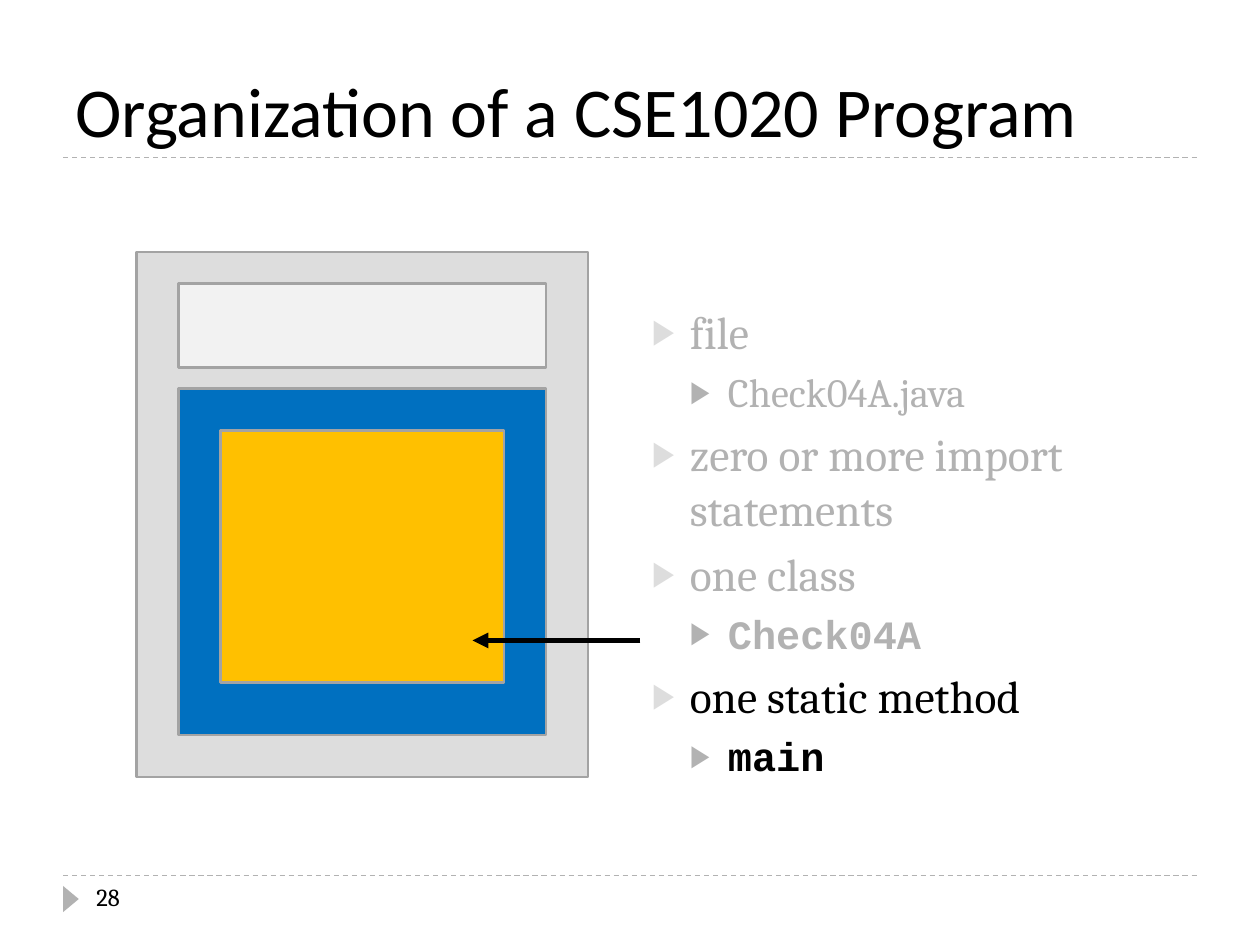
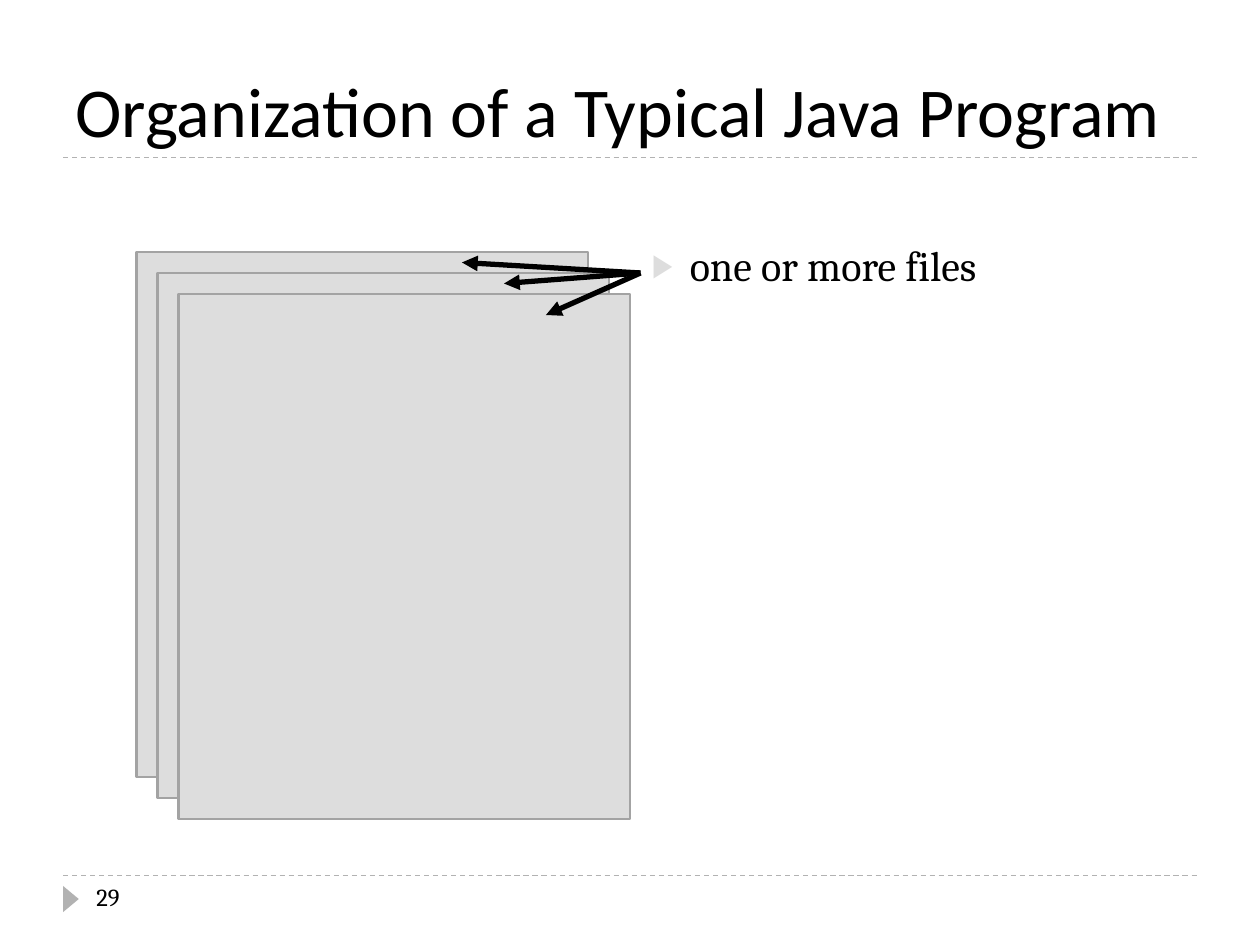
from dataclasses import dataclass
from typing import Any

from lxml.etree import SubElement
from pptx import Presentation
from pptx.dml.color import RGBColor
from pptx.enum.dml import MSO_LINE_DASH_STYLE as Dash
from pptx.enum.shapes import MSO_CONNECTOR_TYPE as ConnectorType
from pptx.enum.shapes import MSO_SHAPE as ShapeType
from pptx.enum.text import MSO_ANCHOR as Anchor
from pptx.enum.text import MSO_AUTO_SIZE as AutoSize
from pptx.enum.text import PP_ALIGN as Align
from pptx.oxml.ns import qn
from pptx.util import Emu, Pt

EMU_PER_PX = 9525
BLACK, WHITE = "000000", "FFFFFF"
MUTED, PALE = "B2B2B2", "DDDDDD"
OUTLINE, IMPORTS, CLASS, METHOD = "A3A3A3", "F2F2F2", "0070C0", "FFC000"
TITLE_FONT, TEXT_FONT, CODE_FONT = "Calibri", "Cambria", "Courier New"
INDENT = 29
BODY_LEFT, BODY_WIDTH, BODY_BOTTOM = 487, 424, 646
RULE_LEFT, RULE_RIGHT = 48, 912
TITLE_RULE, FOOTER_RULE = 120, 667
ARROW_X = 488
FILE_STEP = 16


@dataclass(frozen=True)
class Block:
    left: int
    top: int
    width: int
    height: int
    fill: str


@dataclass(frozen=True)
class Line:
    x1: int
    y1: int
    x2: int
    y2: int


@dataclass(frozen=True)
class Item:
    text: str
    color: str = MUTED
    level: int = 0
    size: int = 26
    font: str = TEXT_FONT
    bold: bool = False


@dataclass(frozen=True)
class Page:
    number: int
    title: str
    body_top: int
    items: list[Item]
    blocks: list[Block]
    arrows: list[Line]


FILE = Block(104, 192, 344, 400, PALE)

PAGES = [
    Page(
        28,
        "Organization of a CSE1020 Program",
        227,
        [
            Item("file"),
            Item("Check04A.java", level=1, size=23),
            Item("zero or more import statements"),
            Item("one class"),
            Item("Check04A", level=1, size=23, font=CODE_FONT, bold=True),
            Item("one static method", BLACK),
            Item("main", BLACK, 1, 23, CODE_FONT, True),
        ],
        [
            FILE,
            Block(136, 216, 280, 64, IMPORTS),
            Block(136, 296, 280, 264, CLASS),
            Block(168, 328, 216, 192, METHOD),
        ],
        [Line(ARROW_X, 488, 360, 488)],
    ),
    Page(
        29,
        "Organization of a Typical Java Program",
        178,
        [Item("one or more files", BLACK, size=24)],
        [
            Block(FILE.left + shift, FILE.top + shift, FILE.width, FILE.height, PALE)
            for shift in range(0, 3 * FILE_STEP, FILE_STEP)
        ],
        [Line(ARROW_X, 208, x, y) for x, y in ((352, 200), (384, 216), (416, 240))],
    ),
]


def px(length: int) -> Emu:
    return Emu(length * EMU_PER_PX)


def rgb(value: str) -> RGBColor:
    return RGBColor.from_string(value)


def apply(target: Any, formats: dict[str, Any]) -> None:
    for name, value in formats.items():
        setattr(target, name, value)


def place(shape: Any, left: int, top: int, width: int, height: int) -> None:
    apply(shape, {"left": px(left), "top": px(top), "width": px(width), "height": px(height)})


def write(para: Any, text: str, font: str, size: int, color: str, bold: bool = False) -> None:
    span = para.add_run()
    span.text = text
    apply(span.font, {"name": font, "size": Pt(size), "bold": bold})
    span.font.color.rgb = rgb(color)


def add_line(slide: Any, line: Line, color: str, width: float) -> Any:
    connector = slide.shapes.add_connector(
        ConnectorType.STRAIGHT, px(line.x1), px(line.y1), px(line.x2), px(line.y2)
    )
    connector.line.color.rgb = rgb(color)
    connector.line.width = Pt(width)
    SubElement(connector._element.spPr, qn("a:effectLst"))
    return connector


def add_rule(slide: Any, y: int) -> None:
    rule = add_line(slide, Line(RULE_LEFT, y, RULE_RIGHT, y), MUTED, 0.75)
    rule.line.dash_style = Dash.DASH


def add_arrow(slide: Any, line: Line) -> None:
    arrow = add_line(slide, line, BLACK, 3)
    SubElement(arrow.line._get_or_add_ln(), qn("a:tailEnd"), type="triangle")


def add_block(slide: Any, block: Block, kind: ShapeType = ShapeType.RECTANGLE) -> Any:
    shape = slide.shapes.add_shape(
        kind, px(block.left), px(block.top), px(block.width), px(block.height)
    )
    shape.shadow.inherit = False
    shape.fill.solid()
    shape.fill.fore_color.rgb = rgb(block.fill)
    shape.line.color.rgb = rgb(OUTLINE)
    shape.line.width = Pt(1.5)
    return shape


def add_title(slide: Any, text: str) -> None:
    title = slide.shapes.title
    place(title, 48, 24, 864, 96)
    frame = title.text_frame
    apply(frame, {"vertical_anchor": Anchor.BOTTOM, "auto_size": AutoSize.NONE})
    para = frame.paragraphs[0]
    para.alignment = Align.LEFT
    write(para, text, TITLE_FONT, 40, BLACK)


def add_bullet(para: Any, level: int) -> None:
    props = para._p.get_or_add_pPr()
    props.set("marL", str(px(INDENT * (level + 1))))
    props.set("indent", str(px(-INDENT)))
    color = SubElement(props, qn("a:buClr"))
    SubElement(color, qn("a:srgbClr"), val=MUTED if level else PALE)
    SubElement(props, qn("a:buSzPct"), val="76000")
    SubElement(props, qn("a:buChar"), char="▶")


def add_items(slide: Any, top: int, items: list[Item]) -> None:
    body = slide.placeholders[1]
    place(body, BODY_LEFT, top, BODY_WIDTH, BODY_BOTTOM - top)
    frame = body.text_frame
    apply(frame, {"word_wrap": True, "auto_size": AutoSize.NONE, "vertical_anchor": Anchor.TOP})
    for index, item in enumerate(items):
        para = frame.add_paragraph() if index else frame.paragraphs[0]
        apply(para, {"level": item.level, "space_before": Pt(6 - item.level)})
        add_bullet(para, item.level)
        write(para, item.text, item.font, item.size, item.color, item.bold)


def add_footer(slide: Any, number: int) -> None:
    add_rule(slide, FOOTER_RULE)
    marker = add_block(slide, Block(44, 679, 20, 12, MUTED), ShapeType.ISOSCELES_TRIANGLE)
    marker.rotation = 90
    marker.line.fill.background()
    box = slide.shapes.add_textbox(px(64), px(FOOTER_RULE), px(208), px(38))
    box.text_frame.word_wrap = True
    write(box.text_frame.paragraphs[0], str(number), TEXT_FONT, 14, BLACK)


def add_page(deck: Any, page: Page) -> None:
    slide = deck.slides.add_slide(deck.slide_layouts[1])
    slide.background.fill.solid()
    slide.background.fill.fore_color.rgb = rgb(WHITE)
    add_rule(slide, TITLE_RULE)
    add_title(slide, page.title)
    add_items(slide, page.body_top, page.items)
    add_footer(slide, page.number)
    for block in page.blocks:
        add_block(slide, block)
    for arrow in page.arrows:
        add_arrow(slide, arrow)


def main() -> None:
    deck = Presentation()
    apply(deck, {"slide_width": px(960), "slide_height": px(720)})
    for page in PAGES:
        add_page(deck, page)
    deck.save("out.pptx")


if __name__ == "__main__":
    main()
